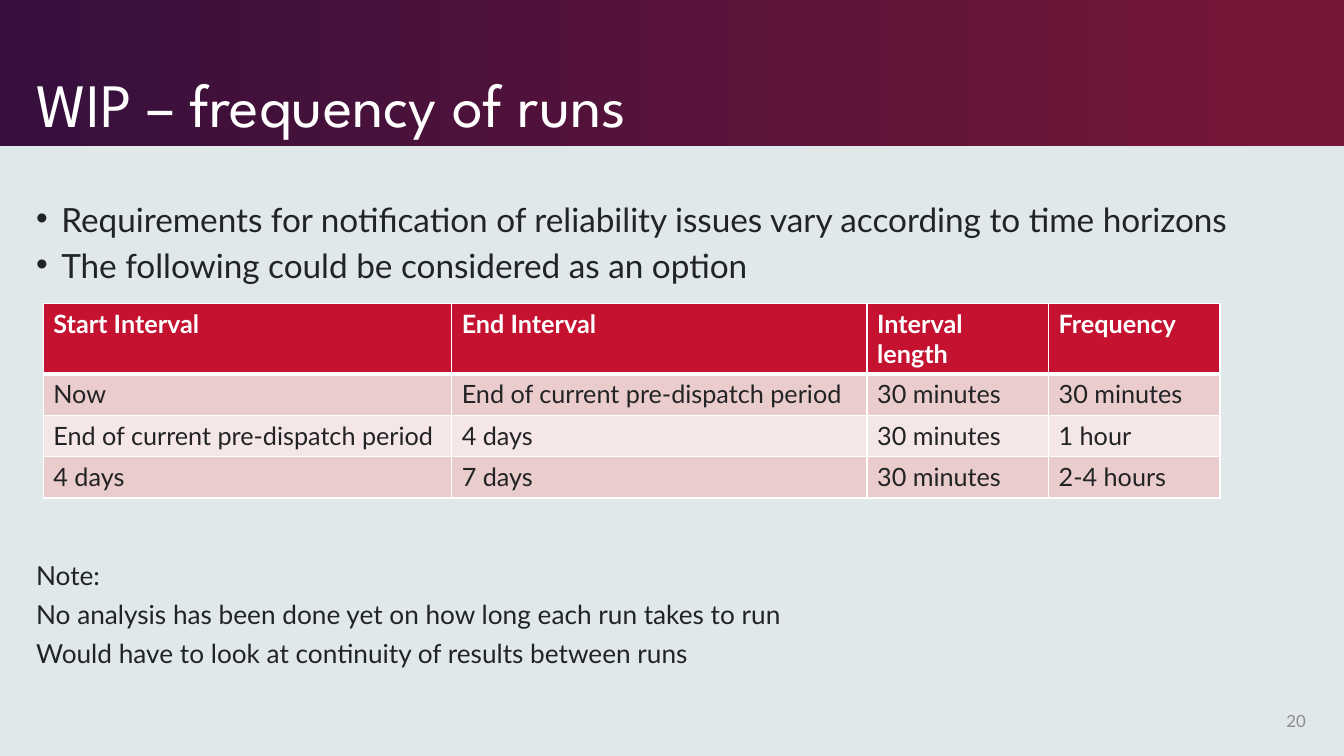
import dataclasses

import lxml.etree
import pptx
import pptx.dml.color
import pptx.enum.shapes
import pptx.enum.text
import pptx.oxml.ns
import pptx.util

Inches = pptx.util.Inches
Pt = pptx.util.Pt
ANCHOR = pptx.enum.text.MSO_ANCHOR
ALIGN = pptx.enum.text.PP_ALIGN


@dataclasses.dataclass(frozen=True)
class Theme:
    background: str = "E0E8EA"
    banner_start: str = "360F3C"
    banner_end: str = "771738"
    white: str = "FFFFFF"
    ink: str = "222324"
    muted: str = "8D8D8E"
    header: str = "C41230"
    bands: tuple = ("EACCCD", "F5E7E8")
    title_font: str = "League Spartan"
    body_font: str = "Lato"
    title_size: float = 44
    bullet_size: float = 23.8
    note_size: float = 18.7
    table_size: float = 18
    number_size: float = 12


THEME = Theme()

HEADINGS = ("Start Interval", "End Interval", "Interval length", "Frequency")
SCHEDULE = (
    ("Now", "End of current pre-dispatch period", "30 minutes", "30 minutes"),
    ("End of current pre-dispatch period", "4 days", "30 minutes", "1 hour"),
    ("4 days", "7 days", "30 minutes", "2-4 hours"),
)
COLUMN_WIDTHS = (4.05, 4.12, 1.8, 1.7)
HEADER_HEIGHT = 0.7
ROW_HEIGHT = 0.41


def rgb(value):
    return pptx.dml.color.RGBColor.from_string(value)


def add_xml(parent, tag, **attributes):
    return lxml.etree.SubElement(parent, pptx.oxml.ns.qn(tag), attributes)


def style_runs(paragraph, size, color, font=THEME.body_font, bold=False):
    for run in paragraph.runs:
        run.font.name = font
        run.font.size = Pt(size)
        run.font.bold = bold
        run.font.color.rgb = rgb(color)


def add_bullet(paragraph):
    properties = paragraph._p.get_or_add_pPr()
    indent = Inches(0.25)
    properties.set("marL", str(indent))
    properties.set("indent", str(-indent))
    add_xml(properties, "a:buFont", typeface="Arial")
    add_xml(properties, "a:buChar", char="•")


def add_text(slide, box, lines, size, color=THEME.ink, font=THEME.body_font,
             anchor=ANCHOR.TOP, align=ALIGN.LEFT, spacing=1.0, bulleted=False):
    frame = slide.shapes.add_textbox(*map(Inches, box)).text_frame
    frame.word_wrap = True
    frame.vertical_anchor = anchor
    frame.text = "\n".join(lines)
    for index, paragraph in enumerate(frame.paragraphs):
        paragraph.alignment = align
        paragraph.line_spacing = spacing
        if index:
            paragraph.space_before = Pt(10)
        if bulleted:
            add_bullet(paragraph)
        style_runs(paragraph, size, color, font)


def add_banner(slide):
    banner = slide.shapes.add_shape(
        pptx.enum.shapes.MSO_SHAPE.RECTANGLE, 0, 0, Inches(13.33), Inches(1.45))
    banner.shadow.inherit = False
    banner.line.fill.background()
    banner.fill.gradient()
    banner.fill.gradient_angle = 0
    stops = ((0, THEME.banner_start), (0.99, THEME.banner_end))
    for stop, (position, color) in zip(banner.fill.gradient_stops, stops):
        stop.position = position
        stop.color.rgb = rgb(color)


def add_borders(cell, top, bottom):
    properties = cell._tc.get_or_add_tcPr()
    for side, width in (("L", 1), ("R", 1), ("T", top), ("B", bottom)):
        border = add_xml(properties, f"a:ln{side}", w=str(Pt(width)))
        fill = add_xml(border, "a:solidFill")
        add_xml(fill, "a:srgbClr", val=THEME.white)


def add_schedule(slide):
    rows = (HEADINGS, *SCHEDULE)
    heights = [HEADER_HEIGHT] + [ROW_HEIGHT] * len(SCHEDULE)
    table = slide.shapes.add_table(
        len(rows), len(HEADINGS), Inches(0.43), Inches(3.01),
        Inches(sum(COLUMN_WIDTHS)), Inches(sum(heights))).table
    for column, width in zip(table.columns, COLUMN_WIDTHS):
        column.width = Inches(width)
    for row_index, (values, height) in enumerate(zip(rows, heights)):
        table.rows[row_index].height = Inches(height)
        is_header = row_index == 0
        fill = THEME.header if is_header else THEME.bands[(row_index - 1) % 2]
        for column_index, value in enumerate(values):
            cell = table.cell(row_index, column_index)
            cell.text = value
            add_borders(cell, 3 if row_index == 1 else 1, 3 if is_header else 1)
            cell.fill.solid()
            cell.fill.fore_color.rgb = rgb(fill)
            style_runs(cell.text_frame.paragraphs[0], THEME.table_size,
                       THEME.white if is_header else THEME.ink, bold=is_header)


def main():
    deck = pptx.Presentation()
    deck.slide_width = Inches(13.33)
    deck.slide_height = Inches(7.5)
    slide = deck.slides.add_slide(deck.slide_layouts[6])
    slide.background.fill.solid()
    slide.background.fill.fore_color.rgb = rgb(THEME.background)

    add_banner(slide)
    add_text(slide, (0.26, 0.15, 9.84, 1.3), ["WIP – frequency of runs"],
             THEME.title_size, THEME.white, THEME.title_font,
             anchor=ANCHOR.BOTTOM, spacing=0.9)
    add_text(slide, (0.26, 2, 12.79, 0.9), [
        "Requirements for notification of reliability issues vary according to time horizons",
        "The following could be considered as an option",
    ], THEME.bullet_size, spacing=0.8, bulleted=True)
    add_schedule(slide)
    add_text(slide, (0.26, 5.56, 12.79, 1.2), [
        "Note:",
        "No analysis has been done yet on how long each run takes to run",
        "Would have to look at continuity of results between runs",
    ], THEME.note_size, spacing=0.8)
    add_text(slide, (12.42, 6.95, 0.63, 0.4), ["20"], THEME.number_size,
             THEME.muted, anchor=ANCHOR.MIDDLE, align=ALIGN.RIGHT)
    deck.save("out.pptx")


if __name__ == "__main__":
    main()
